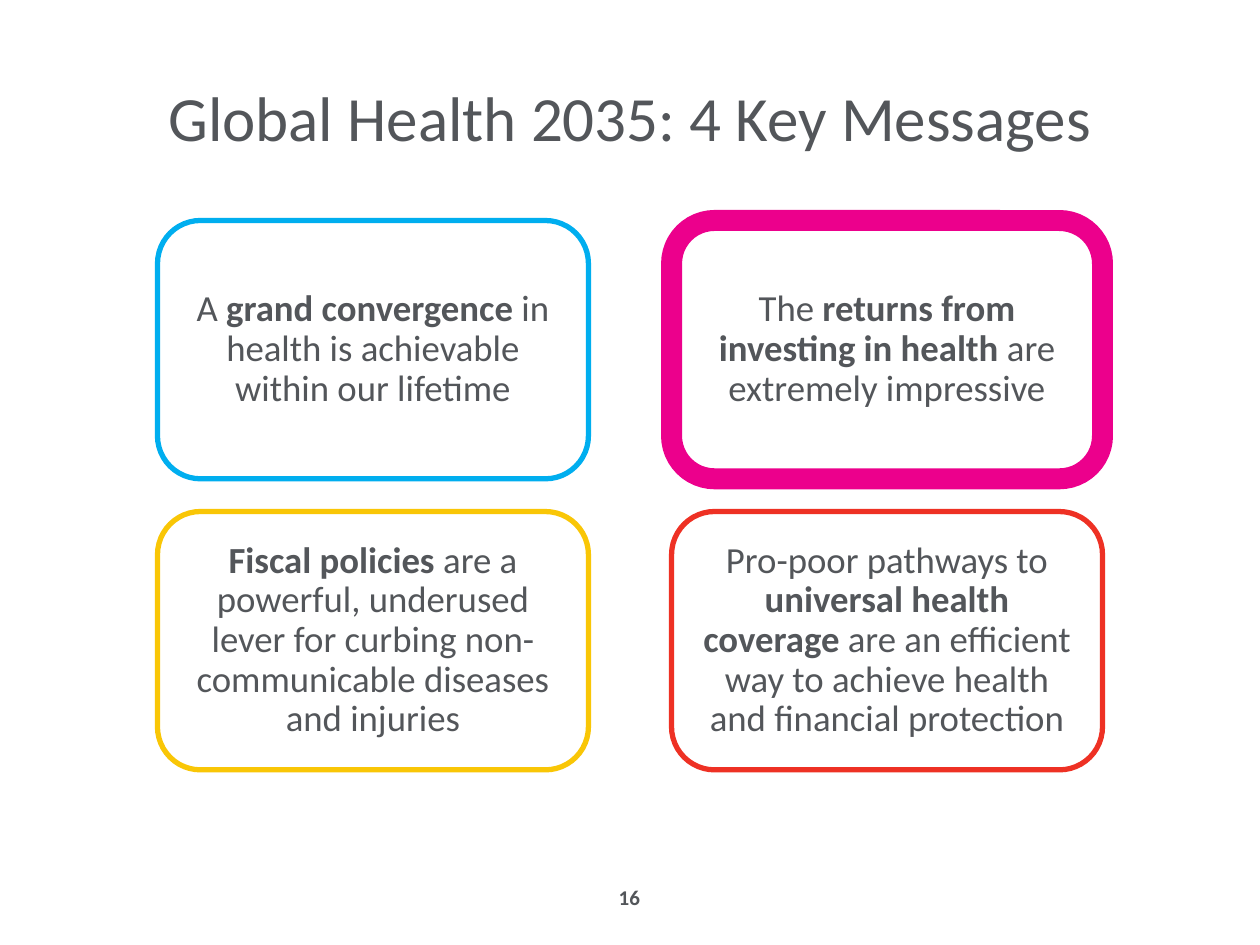
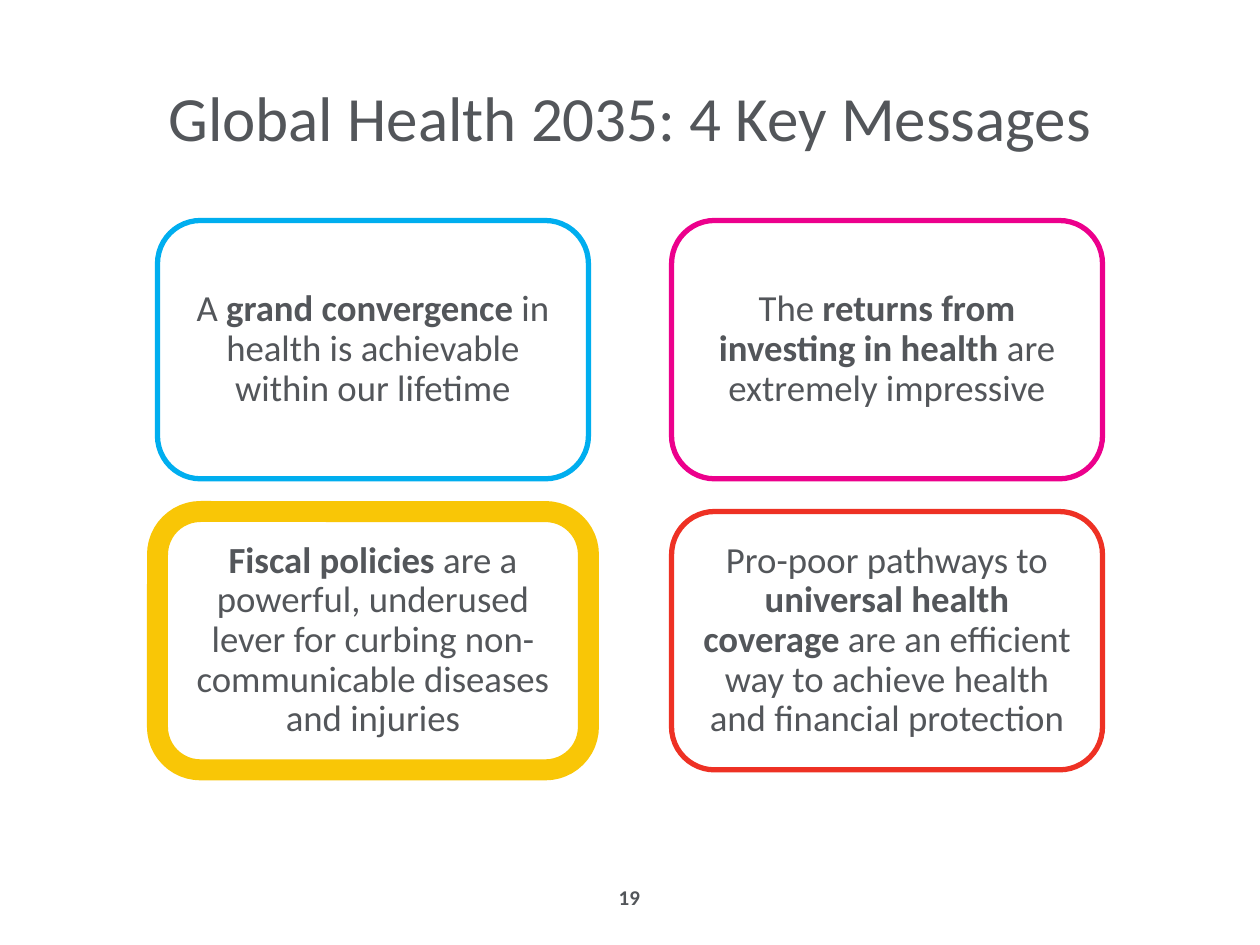
from pptx import Presentation
from pptx.dml.color import RGBColor
from pptx.enum.shapes import MSO_SHAPE
from pptx.enum.text import MSO_ANCHOR, PP_ALIGN
from pptx.util import Inches, Pt

ROUNDED = MSO_SHAPE.ROUNDED_RECTANGLE
MIDDLE = MSO_ANCHOR.MIDDLE
CENTER = PP_ALIGN.CENTER

COLORS = {
    "text": "53565A",
    "card": "FFFFFF",
    "convergence": "00AEEF",
    "returns": "EC008C",
    "fiscal": "F9C606",
    "coverage": "EE3124",
}
FONT = "Calibri"
TITLE = "Global Health 2035: 4 Key Messages"

WIDTH, HEIGHT = 10, 7.5
LEFT, TOP = 0.125 * WIDTH, 1.75
CARD_W, CARD_H = 3.42, 2.05
COLUMN_STEP, ROW_STEP = 4.08, 2.31
THIN, THICK = 3, 12

MESSAGES = [
    ("returns", 1, 0, [("The ", False), ("returns from investing in health", True),
                       (" are extremely impressive", False)]),
    ("convergence", 0, 0, [("A ", False), ("grand convergence", True),
                           (" in health is achievable within our lifetime", False)]),
    ("fiscal", 0, 1, [("Fiscal policies ", True),
                      ("are a powerful, underused lever for curbing "
                       "non-communicable diseases and injuries", False)]),
    ("coverage", 1, 1, [("Pro-poor pathways to ", False), ("universal health coverage ", True),
                        ("are an efficient way to achieve health "
                         "and financial protection", False)]),
]
PAGES = [("16", "returns"), ("19", "fiscal")]


def color(name):
    return RGBColor.from_string(COLORS[name])


def write(shape, runs, size):
    frame = shape.text_frame
    frame.word_wrap = True
    frame.vertical_anchor = MIDDLE
    paragraph = frame.paragraphs[0]
    paragraph.alignment = CENTER
    for text, bold in runs:
        run = paragraph.add_run()
        run.text = text
        run.font.name = FONT
        run.font.size = Pt(size)
        run.font.bold = bold
        run.font.color.rgb = color("text")
    return frame


deck = Presentation()
deck.slide_width, deck.slide_height = Inches(WIDTH), Inches(HEIGHT)
blank = deck.slide_layouts[6]

for number, highlighted in PAGES:
    slide = deck.slides.add_slide(blank)

    heading = slide.shapes.add_textbox(
        Inches(0.05 * WIDTH), Inches(0.04 * HEIGHT), Inches(0.9 * WIDTH), Inches(1.25))
    write(heading, [(TITLE, False)], 36)

    for topic, column, row, runs in MESSAGES:
        card = slide.shapes.add_shape(
            ROUNDED, Inches(LEFT + column * COLUMN_STEP), Inches(TOP + row * ROW_STEP),
            Inches(CARD_W), Inches(CARD_H))
        card.shadow.inherit = False
        card.fill.solid()
        card.fill.fore_color.rgb = color("card")
        card.line.color.rgb = color(topic)
        card.line.width = Pt(THICK if topic == highlighted else THIN)
        message = write(card, runs, 21)
        message.margin_left = message.margin_right = Inches(0.09)
        message.margin_top = message.margin_bottom = Inches(0.09)
        message.paragraphs[0].line_spacing = 0.9

    page_number = slide.shapes.add_textbox(
        Inches(3.83), Inches(6.92), Inches(2.33), Inches(0.4))
    write(page_number, [(number, True)], 12)

deck.save("out.pptx")
